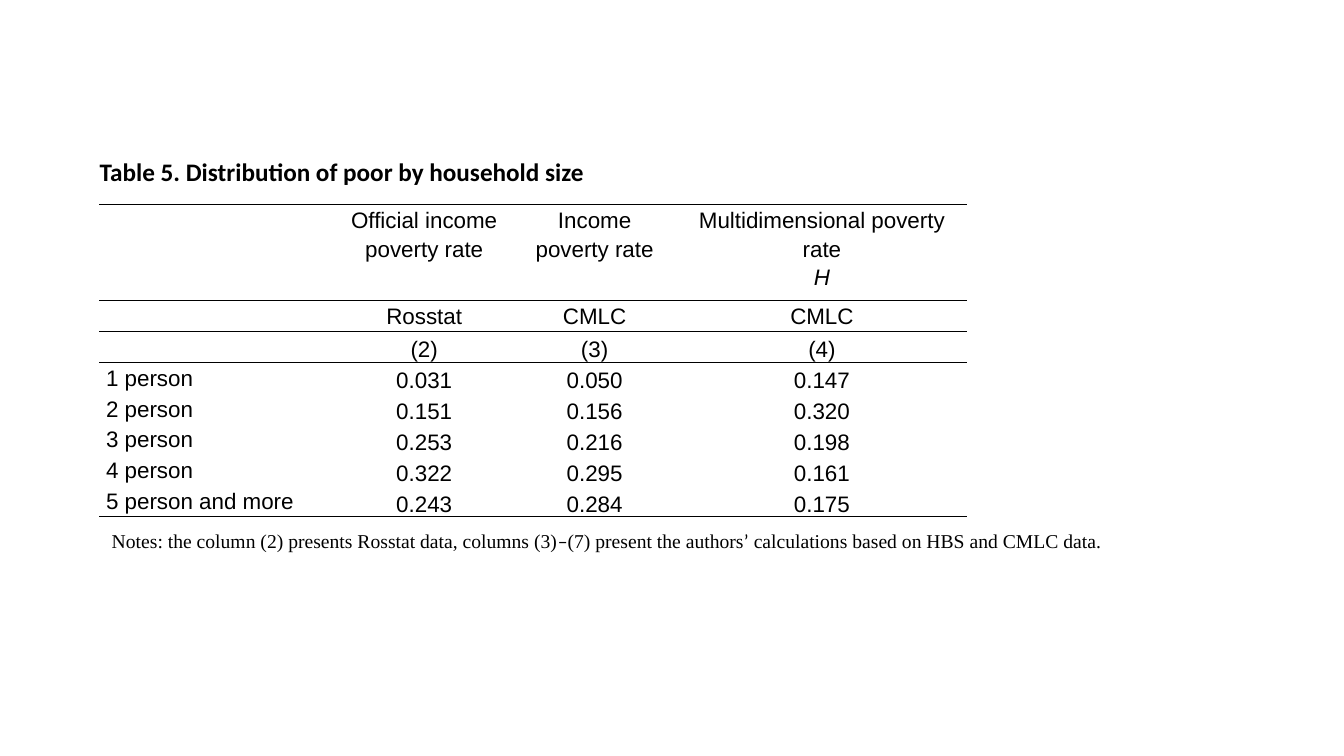
from lxml import etree
from pptx import Presentation
from pptx.dml.color import RGBColor
from pptx.enum.text import MSO_ANCHOR, MSO_AUTO_SIZE, PP_ALIGN
from pptx.oxml.ns import qn
from pptx.util import Inches, Pt

CENTER, JUSTIFY, LEFT = PP_ALIGN.CENTER, PP_ALIGN.JUSTIFY, PP_ALIGN.LEFT
TOP, MIDDLE, BOTTOM = MSO_ANCHOR.TOP, MSO_ANCHOR.MIDDLE, MSO_ANCHOR.BOTTOM
GROW = MSO_AUTO_SIZE.SHAPE_TO_FIT_TEXT

BLACK = RGBColor(0, 0, 0)
SLIDE_WIDTH, SLIDE_HEIGHT = Inches(13.33), Inches(7.5)
SANS, TITLE_FONT, SERIF = "Arial", "Calibri", "Times New Roman"

# Table grid, in percent of the slide's width and height
COLUMN_SHARES = [17.63, 13.13, 12.23, 21.6]
HEADER_SHARE, ROW_SHARE = 12.67, 4.08
RULED_ROWS = {0, 1, 2, 7}
CODE_ROW = 2

ROWS = [
    ["", "Official income poverty rate", "Income poverty rate",
     "Multidimensional poverty rate\nH"],
    ["", "Rosstat", "CMLC", "CMLC"],
    ["", "(2)", "(3)", "(4)"],
    ["1 person", "0.031", "0.050", "0.147"],
    ["2 person", "0.151", "0.156", "0.320"],
    ["3 person", "0.253", "0.216", "0.198"],
    ["4 person", "0.322", "0.295", "0.161"],
    ["5 person and more", "0.243", "0.284", "0.175"],
]
NOTES = [
    ("Notes: the column (2) presents Rosstat data, columns (3)", SERIF),
    ("–", TITLE_FONT),
    ("(7) present the authors", SERIF),
    ("’", TITLE_FONT),
    (" calculations based on HBS and CMLC data.", SERIF),
]


def across(percent):
    return round(SLIDE_WIDTH * percent / 100)


def down(percent):
    return round(SLIDE_HEIGHT * percent / 100)


def add_run(paragraph, text, font_name, size, bold=False, italic=False):
    run = paragraph.add_run()
    run.text = text
    font = run.font
    font.name, font.size = font_name, Pt(size)
    font.bold, font.italic = bold, italic
    font.color.rgb = BLACK


def add_text_line(slide, place, runs, size, alignment, anchor=TOP, wrap=True, bold=False):
    left, top, width, height = place
    box = slide.shapes.add_textbox(across(left), down(top), across(width), down(height))
    frame = box.text_frame
    frame.word_wrap, frame.auto_size = wrap, GROW
    frame.vertical_anchor = anchor
    paragraph = frame.paragraphs[0]
    paragraph.alignment = alignment
    for text, font_name in runs:
        add_run(paragraph, text, font_name, size, bold)


def set_borders(cell, ruled_sides):
    """Draw the named sides (L, R, T, B) in black and clear the others."""
    properties = cell._tc.get_or_add_tcPr()
    for side in "LRTB":
        line = etree.SubElement(properties, qn(f"a:ln{side}"), w=str(Pt(1)))
        if side in ruled_sides:
            fill = etree.SubElement(line, qn("a:solidFill"))
            etree.SubElement(fill, qn("a:srgbClr"), val=str(BLACK))
        else:
            etree.SubElement(line, qn("a:noFill"))


def fill_cell(cell, text, alignment, anchor):
    cell.margin_left = cell.margin_right = Inches(0.07)
    cell.margin_top = cell.margin_bottom = 0
    cell.vertical_anchor = anchor
    if not text:
        return
    frame = cell.text_frame
    for index, line in enumerate(text.split("\n")):
        paragraph = frame.add_paragraph() if index else frame.paragraphs[0]
        paragraph.alignment = alignment
        paragraph.line_spacing = 1.15
        add_run(paragraph, line, SANS, 16, italic=line == "H")


def add_poverty_table(slide, left, top):
    row_shares = [HEADER_SHARE] + [ROW_SHARE] * (len(ROWS) - 1)
    frame = slide.shapes.add_table(
        len(ROWS), len(COLUMN_SHARES), across(left), down(top),
        across(sum(COLUMN_SHARES)), down(sum(row_shares)))
    table = frame.table
    table.first_row = table.horz_banding = False
    for column, share in zip(table.columns, COLUMN_SHARES):
        column.width = across(share)
    for row, share in zip(table.rows, row_shares):
        row.height = down(share)
    for row_index, texts in enumerate(ROWS):
        above = "T" if row_index == 0 or row_index - 1 in RULED_ROWS else ""
        below = "B" if row_index in RULED_ROWS else ""
        for column_index, text in enumerate(texts):
            cell = table.cell(row_index, column_index)
            is_label = column_index == 0
            anchor = TOP if is_label or row_index < CODE_ROW else BOTTOM
            fill_cell(cell, text, JUSTIFY if is_label else CENTER, anchor)
            set_borders(cell, above + below)
            cell.fill.background()


def main():
    presentation = Presentation()
    presentation.slide_width, presentation.slide_height = SLIDE_WIDTH, SLIDE_HEIGHT
    slide = presentation.slides.add_slide(presentation.slide_layouts[6])
    add_text_line(slide, (7.58, 69.2, 75.77, 4.53), NOTES, 14, JUSTIFY,
                  anchor=MIDDLE, wrap=False)
    add_text_line(slide, (6.68, 20, 72.09, 5.33),
                  [("Table 5. Distribution of poor by household size", TITLE_FONT)],
                  18, LEFT, bold=True)
    add_poverty_table(slide, 7.37, 27.07)
    presentation.save("out.pptx")


if __name__ == "__main__":
    main()
